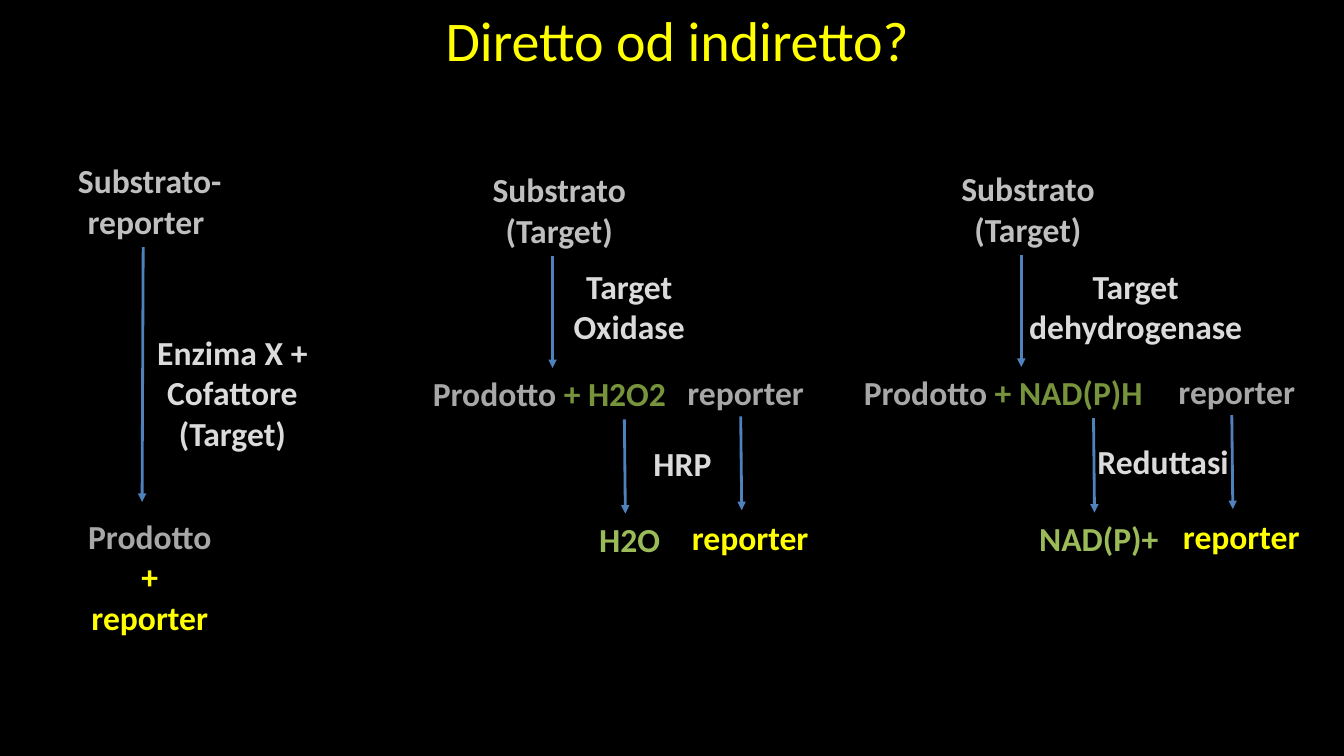
from lxml import etree
from pptx import Presentation
from pptx.dml.color import RGBColor
from pptx.enum.shapes import MSO_CONNECTOR
from pptx.enum.text import MSO_ANCHOR, MSO_AUTO_SIZE, PP_ALIGN
from pptx.oxml.ns import qn
from pptx.util import Pt

STRAIGHT = MSO_CONNECTOR.STRAIGHT
MIDDLE, TOP = MSO_ANCHOR.MIDDLE, MSO_ANCHOR.TOP
GROW, FIXED = MSO_AUTO_SIZE.SHAPE_TO_FIT_TEXT, MSO_AUTO_SIZE.NONE
CENTER, LEFT = PP_ALIGN.CENTER, PP_ALIGN.LEFT

BLACK, YELLOW, BLUE = "000000", "FFFF00", "4F81BD"
SILVER, PALE, GREY = "BFBFBF", "DBDBDB", "A7A7A7"
OLIVE, GREEN = "77933C", "9BBB59"
ONE, TWO, THREE = 36, 65.5, 94.5  # box heights by number of lines


def color(code):
    return RGBColor.from_string(code)


class Board:
    font = "Calibri"
    inset = 3.6

    def __init__(self, deck):
        self.slide = deck.slides.add_slide(deck.slide_layouts[5])
        fill = self.slide.background.fill
        fill.solid()
        fill.fore_color.rgb = color(BLACK)

    def fill_text(self, frame, paras, align, size, bold):
        """Fill a frame; each paragraph is a list of (text, colour) runs."""
        frame.word_wrap = True
        frame.margin_left = frame.margin_right = Pt(self.inset)
        frame.margin_top = frame.margin_bottom = Pt(self.inset)
        for i, runs in enumerate(paras):
            para = frame.add_paragraph() if i else frame.paragraphs[0]
            para.alignment = align
            for text, code in runs:
                run = para.add_run()
                run.text = text
                run.font.name = self.font
                run.font.size = Pt(size)
                run.font.bold = bold
                run.font.color.rgb = color(code)

    def title(self, x, y, w, h, text):
        shape = self.slide.shapes.title
        shape.left, shape.top = Pt(x), Pt(y)
        shape.width, shape.height = Pt(w), Pt(h)
        frame = shape.text_frame
        frame.auto_size = FIXED
        frame.vertical_anchor = MIDDLE
        self.fill_text(frame, [[(text, YELLOW)]], CENTER, 40, False)

    def label(self, x, y, w, h, *paras, align=CENTER):
        box = self.slide.shapes.add_textbox(Pt(x), Pt(y), Pt(w), Pt(h))
        frame = box.text_frame
        frame.vertical_anchor = TOP
        self.fill_text(frame, paras, align, 24, True)
        frame.auto_size = GROW

    def arrow(self, x1, y1, x2, y2):
        line = self.slide.shapes.add_connector(
            STRAIGHT, Pt(x1), Pt(y1), Pt(x2), Pt(y2))
        line.line.color.rgb = color(BLUE)
        line.line.width = Pt(2)
        props = line._element.spPr
        tail = etree.SubElement(props.find(qn("a:ln")), qn("a:tailEnd"))
        tail.set("type", "triangle")
        etree.SubElement(props, qn("a:effectLst"))

    def direct(self):
        """Draw the one-step reaction on the left."""
        self.label(47.5, 111, 119, TWO, [("Substrato-reporter ", SILVER)])
        self.label(106.5, 233.5, 119, THREE, [("Enzima X +", PALE)],
                   [("Cofattore", PALE)], [("(Target)", PALE)])
        self.arrow(102.3, 176.5, 101.5, 358.5)
        self.label(47.5, 365, 119, THREE, [("Prodotto", GREY)],
                   [("+", YELLOW)], [("reporter", YELLOW)])

    def coupled(self, x, y, enzyme, product, spent, helper, reporter):
        """Draw a two-step reaction; x, y is the corner of its substrate."""
        self.label(x, y, 119, TWO,
                   [("Substrato", SILVER)], [("(Target)", SILVER)])
        ex, ew, name = enzyme
        self.label(ex, 186.5, ew, THREE, [(name, PALE)])
        self.arrow(x + 54.7, y + 65.5, x + 54.7, y + 145.5)
        px, pw, formed = product
        self.label(px, y + 145.5, pw, ONE,
                   [("Prodotto ", GREY), (formed, OLIVE)])
        sx, text = spent
        self.label(sx, y + 249.8, 177, ONE, [(text, GREEN)])
        hx, text = helper
        self.label(hx, y + 195.1, 177, ONE, [(text, PALE)])
        self.arrow(sx + 84.7, y + 182.1, sx + 85.4, y + 249.5)
        rx = reporter
        self.arrow(rx + 41.7, y + 180, rx + 42.4, y + 247)
        self.label(rx + 3.2, y + 248.4, 216, ONE,
                   [("reporter", YELLOW)], align=LEFT)
        self.label(rx, y + 144.7, 216, ONE,
                   [("reporter", GREY)], align=LEFT)


def main():
    deck = Presentation()
    deck.slide_width, deck.slide_height = Pt(960), Pt(540)
    board = Board(deck)
    board.title(101, -1.5, 765.5, 59, "Diretto od indiretto?")
    board.direct()
    board.coupled(340, 117.4, (390, 119, "Target Oxidase"),
                  (304, 177, "+ H2O2"), (361.3, "H2O"),
                  (399, "HRP"), 487.4)
    board.coupled(674.8, 116.6, (727.2, 168, "Target dehydrogenase"),
                  (610.6, 212, "+ NAD(P)H"), (696.4, "NAD(P)+"),
                  (742.3, "Reduttasi"), 838.2)
    deck.save("out.pptx")


if __name__ == "__main__":
    main()
